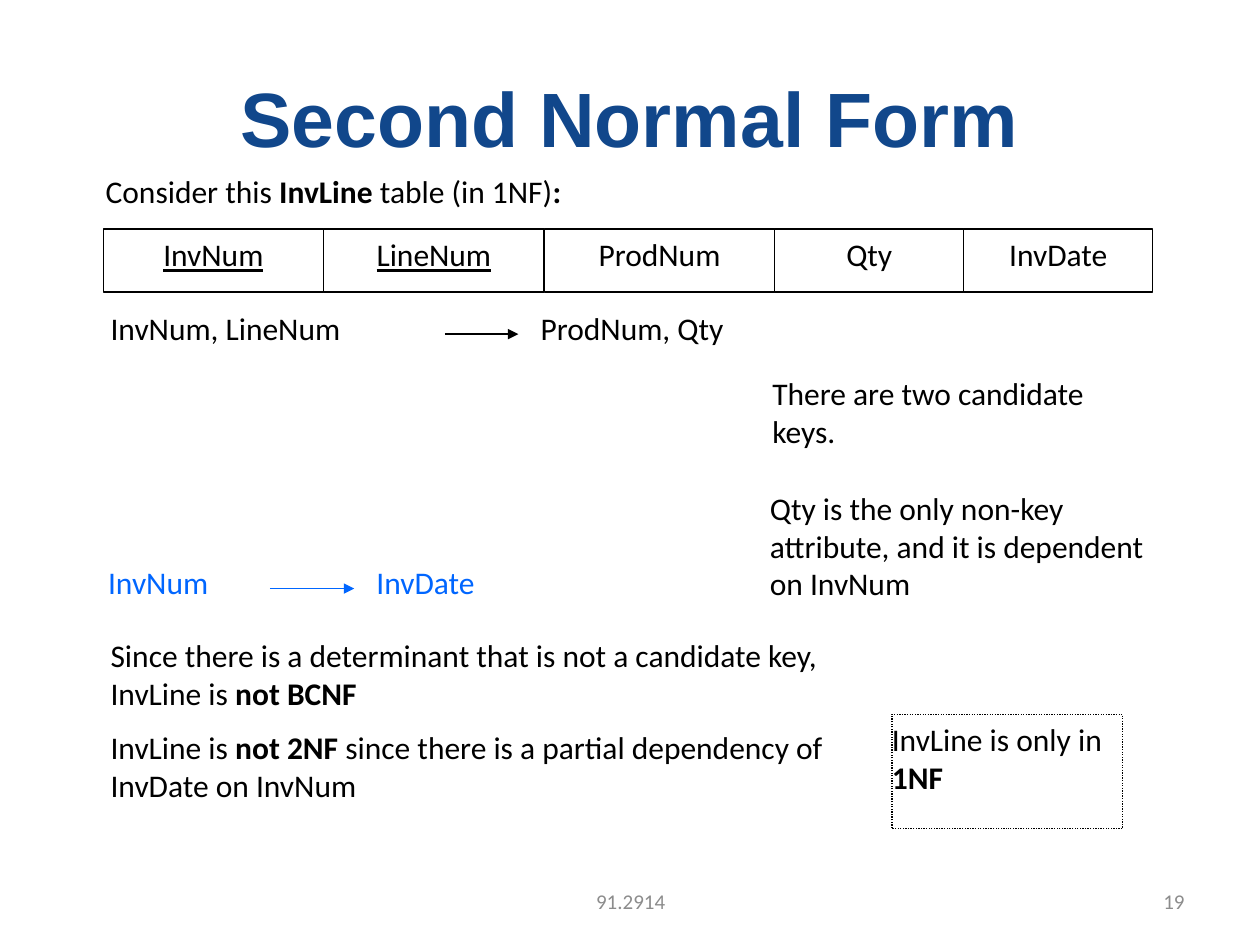
from lxml.etree import SubElement as Sub
from pptx import Presentation
from pptx.dml.color import RGBColor
from pptx.enum.dml import MSO_LINE as Dash
from pptx.enum.shapes import MSO_CONNECTOR as Link, MSO_SHAPE as Kind
from pptx.enum.text import MSO_ANCHOR as Anchor, PP_ALIGN as Align
from pptx.oxml.ns import qn
from pptx.util import Cm, Pt

BLACK, BLUE, GREY, NAVY = "000000", "0066FF", "8C8C8C", "11478B"


def paint(target, color):
    if hasattr(target, "solid"):
        target.solid()
        target = target.fore_color
    target.rgb = RGBColor.from_string(color)


def write(shape, text, size=18, font="Calibri", color=BLACK, bold=False,
          under=False, align=Align.LEFT, anchor=Anchor.TOP, gap=0):
    frame = shape.text_frame
    frame.word_wrap = True
    frame.vertical_anchor = anchor
    for i, line in enumerate(text.split("\n")):
        para = frame.add_paragraph() if i else frame.paragraphs[0]
        para.alignment = align
        para.space_before = Pt(gap if i else 0)
        for j, part in enumerate(line.split("*")):
            if part:
                run = para.add_run()
                run.text = part
                run.font.size, run.font.name = Pt(size), font
                run.font.bold = bold or j % 2 == 1
                run.font.underline = under
                paint(run.font.color, color)


def label(slide, box, text, **style):
    shape = slide.shapes.add_textbox(*map(Cm, box))
    write(shape, text, **style)


def frame(slide, box, fill=None):
    shape = slide.shapes.add_shape(Kind.RECTANGLE, *map(Cm, box))
    shape.shadow.inherit = False
    if fill:
        paint(shape.fill, fill)
    else:
        shape.fill.background()
    paint(shape.line.color, BLACK)
    shape.line.width = Pt(0.75)
    return shape


def arrow(slide, left, right, y, color):
    line = slide.shapes.add_connector(
        Link.STRAIGHT, Cm(left), Cm(y), Cm(right), Cm(y))
    paint(line.line.color, color)
    line.line.width = Pt(0.75)
    Sub(line.line._get_or_add_ln(), qn("a:tailEnd"), type="triangle")
    Sub(line._element.spPr, qn("a:effectLst"))


def schema(slide, box, cols):
    x, y, width, height = box
    total = sum(share for _, share, _ in cols)
    for name, share, key in cols:
        wide = width * share / total
        cell = frame(slide, (x, y, wide, height), "FFFFFF")
        write(cell, name, under=key, align=Align.CENTER)
        x += wide


def depend(slide, box, left, right, split, reach, color=BLACK):
    x, y, width, height = box
    start = x + split
    end = start + reach
    label(slide, (x, y, split - 0.2, height), left, color=color)
    arrow(slide, start, end, y + height / 2, color)
    label(slide, (end + 0.2, y, x + width - end - 0.2, height),
          right, color=color)


def verdict(slide, box, text):
    shape = frame(slide, box)
    shape.line.dash_style = Dash.ROUND_DOT
    shape.text_frame.margin_left = 0
    write(shape, text)


def footer(slide, box, note, page):
    x, y, width, height = box
    style = dict(size=12, color=GREY, anchor=Anchor.MIDDLE)
    label(slide, (x, y, 8.05, height), note, align=Align.CENTER, **style)
    label(slide, (x + width - 5.93, y, 5.93, height), page,
          align=Align.RIGHT, **style)


def main():
    deck = Presentation()
    deck.slide_width, deck.slide_height = Cm(25.4), Cm(19.05)
    slide = deck.slides.add_slide(deck.slide_layouts[6])
    label(slide, (1.27, 0.76, 22.86, 3.18), "Second Normal Form", size=44,
          font="Arial", color=NAVY, bold=True, align=Align.CENTER,
          anchor=Anchor.MIDDLE)
    label(slide, (1.88, 3.35, 13.36, 1.27),
          "Consider this* InvLine *table (in 1NF)*:*")
    schema(slide, (2.08, 4.62, 21.16, 1.27), [
        ("InvNum", 1.75, True), ("LineNum", 1.75, True),
        ("ProdNum", 1.83, False), ("Qty", 1.5, False),
        ("InvDate", 1.5, False)])
    depend(slide, (1.98, 6.1, 17.02, 1.27),
           "InvNum, LineNum", "ProdNum, Qty", 6.99, 1.48)
    depend(slide, (1.93, 11.23, 8.64, 1.27),
           "InvNum", "InvDate", 3.51, 1.7, BLUE)
    label(slide, (15.32, 7.42, 7.37, 2.29), "There are two candidate keys.")
    label(slide, (15.27, 9.73, 8.33, 3.3),
          "Qty is the only non-key attribute, "
          "and it is dependent on InvNum")
    label(slide, (1.98, 12.7, 15.04, 4.83),
          "Since there is a determinant that is not a candidate key, "
          "InvLine is *not BCNF*\n"
          "InvLine is *not 2NF* since there is a partial dependency of "
          "InvDate on InvNum", gap=9.5)
    verdict(slide, (17.98, 14.4, 4.65, 2.31), "InvLine is only in *1NF*")
    footer(slide, (8.69, 17.65, 15.44, 1.02), "91.2914", "19")
    deck.save("out.pptx")


if __name__ == "__main__":
    main()
